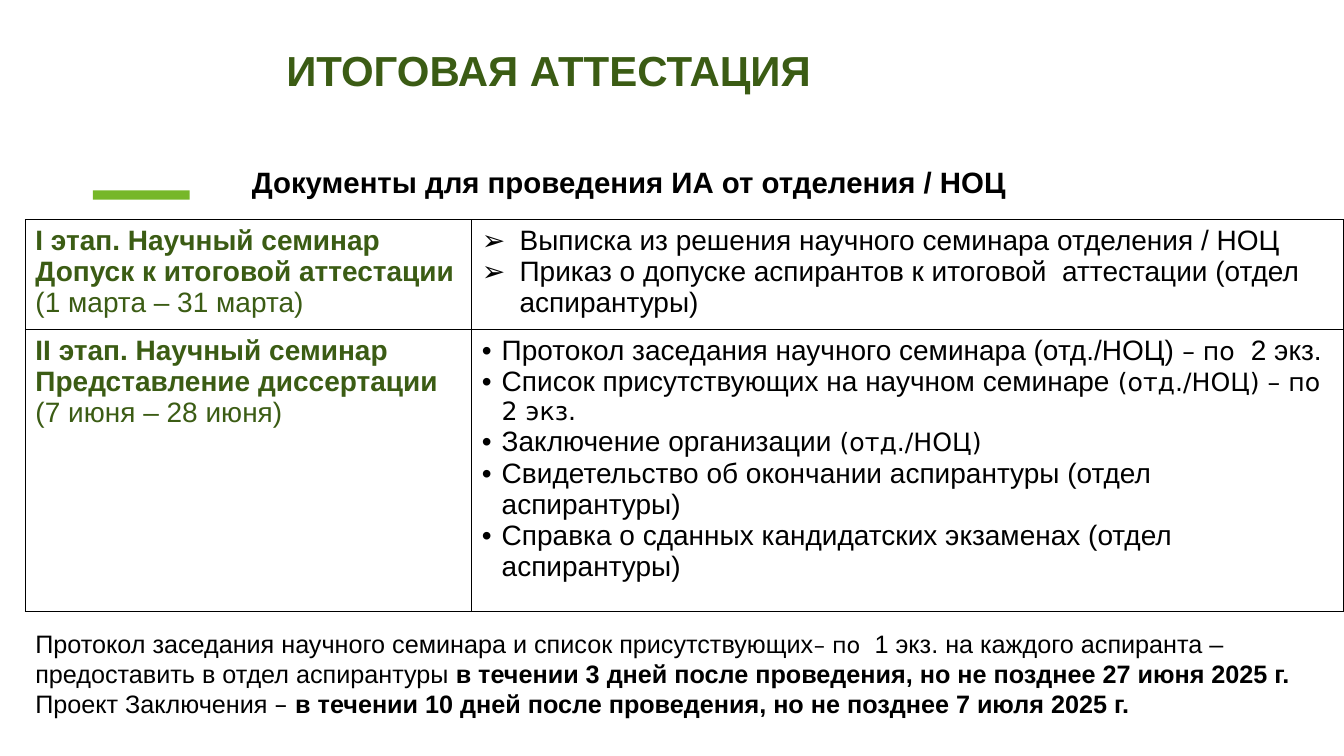
from lxml import etree
from pptx import Presentation
from pptx.dml.color import RGBColor
from pptx.enum.shapes import MSO_SHAPE
from pptx.enum.text import MSO_ANCHOR, PP_ALIGN
from pptx.oxml.ns import qn
from pptx.util import Cm, Pt

RECT = MSO_SHAPE.RECTANGLE
MIDDLE = MSO_ANCHOR.MIDDLE
LEFT, CENTER = PP_ALIGN.LEFT, PP_ALIGN.CENTER
COLORS = {"dark": "3B5C14", "lime": "76B729", "black": "000000"}
SIDES = ("a:lnL", "a:lnR", "a:lnT", "a:lnB")


def plain(text, size=18):
    return text, {"name": "DejaVu Sans", "size": Pt(size)}


def strong(text):
    return text, {"bold": True}


class Deck:
    """Holds the style and the current slide and draws each kind of element."""

    def __init__(self):
        self.show = Presentation()
        self.show.slide_width, self.show.slide_height = Cm(33.87), Cm(19.05)
        self.slide = self.show.slides.add_slide(self.show.slide_layouts[5])

    def color(self, name):
        return RGBColor.from_string(COLORS[name])

    def bullet(self, para, mark, indent):
        props = para._p.get_or_add_pPr()
        props.set("marL", str(Cm(indent)))
        props.set("indent", str(-Cm(indent)))
        etree.SubElement(props, qn("a:buFont")).set("typeface", "Arial")
        etree.SubElement(props, qn("a:buChar")).set("char", mark)

    def lines(self, frame, lines, size, color="black", bold=False, align=LEFT,
              space=None, mark=None, indent=0.0):
        frame.word_wrap = True
        for i, line in enumerate(lines):
            para = frame.paragraphs[0] if i == 0 else frame.add_paragraph()
            para.alignment = align
            if space:
                para.line_spacing = space
            if mark:
                self.bullet(para, mark, indent)
            font = para.font
            font.name, font.size, font.bold = "Arial", Pt(size), bold
            font.color.rgb = self.color(color)
            for part in [line] if isinstance(line, str) else line:
                text, look = (part, {}) if isinstance(part, str) else part
                run = para.add_run()
                run.text = text
                for key, value in look.items():
                    setattr(run.font, key, value)

    def place(self, shape, box):
        shape.left, shape.top, shape.width, shape.height = map(Cm, box)

    def title(self, text, box):
        shape = self.slide.shapes.title
        self.place(shape, box)
        shape.text_frame.vertical_anchor = MIDDLE
        self.lines(shape.text_frame, [text], 30, "dark", True, space=0.9)

    def bar(self, box, color):
        shape = self.slide.shapes.add_shape(RECT, *map(Cm, box))
        shape.shadow.inherit = False
        shape.fill.solid()
        shape.fill.fore_color.rgb = self.color(color)
        shape.line.fill.background()

    def text(self, lines, box, size, **style):
        shape = self.slide.shapes.add_textbox(*map(Cm, box))
        self.lines(shape.text_frame, lines, size, **style)

    def border(self, cell):
        props = cell._tc.get_or_add_tcPr()
        for i, side in enumerate(SIDES):
            line = etree.Element(qn(side), w=str(Pt(1)))
            fill = etree.SubElement(line, qn("a:solidFill"))
            etree.SubElement(fill, qn("a:srgbClr")).set("val", COLORS["black"])
            props.insert(i, line)

    def table(self, rows, left, top, widths, heights):
        table = self.slide.shapes.add_table(
            len(rows), len(widths), Cm(left), Cm(top),
            Cm(sum(widths)), Cm(sum(heights))).table
        table.first_row = table.horz_banding = False
        for col, width in zip(table.columns, widths):
            col.width = Cm(width)
        for r, (cells, height) in enumerate(zip(rows, heights)):
            table.rows[r].height = Cm(height)
            for c, (lines, style) in enumerate(cells):
                cell = table.cell(r, c)
                cell.fill.background()
                self.border(cell)
                self.lines(cell.text_frame, lines, 20, **style)


def main():
    deck = Deck()
    deck.bar((2.34, 4.8, 2.44, 0.23), "lime")
    deck.title("ИТОГОВАЯ АТТЕСТАЦИЯ", (6.96, 0.69, 13.92, 2.29))
    stage = {"color": "dark"}
    arrow = {"mark": "➢", "indent": 0.95}
    dot = {"mark": "•", "indent": 0.5}
    rows = [
        [([[strong("I этап. Научный семинар")],
           [strong("Допуск к итоговой аттестации")],
           "(1 марта – 31 марта)"], stage),
         (["Выписка из решения научного семинара отделения / НОЦ",
           "Приказ о допуске аспирантов к итоговой  аттестации "
           "(отдел аспирантуры)"], arrow)],
        [([[strong("II этап. Научный семинар Представление диссертации")],
           "(7 июня – 28 июня)"], stage),
         ([["Протокол заседания научного семинара (отд./НОЦ) ",
            plain("– по  "), "2 экз."],
           ["Список присутствующих на научном семинаре ",
            plain("(отд./НОЦ) – по 2 экз.")],
           ["Заключение организации ", plain("(отд./НОЦ)")],
           "Свидетельство об окончании аспирантуры (отдел аспирантуры)",
           "Справка о сданных кандидатских экзаменах (отдел аспирантуры)"],
          dot)],
    ]
    deck.table(rows, 0.64, 5.54, (11.25, 21.97), (2.77, 7.09))
    deck.text(["Документы для проведения ИА от отделения / НОЦ"],
              (2.26, 3.84, 27.18, 1.45), 21, bold=True, align=CENTER, space=1.2)
    deck.text([
        ["Протокол заседания научного семинара и список присутствующих",
         plain("– по  ", 16),
         "1 экз. на каждого аспиранта – предоставить в отдел аспирантуры ",
         strong("в течении 3 дней после проведения, "
                "но не позднее 27 июня 2025 г.")],
        ["Проект Заключения ", plain("– "),
         strong("в течении 10 дней после проведения, "
                "но не позднее 7 июля 2025 г.")],
    ], (0.64, 15.7, 32.64, 2.57), 18)
    deck.show.save("out.pptx")


if __name__ == "__main__":
    main()
